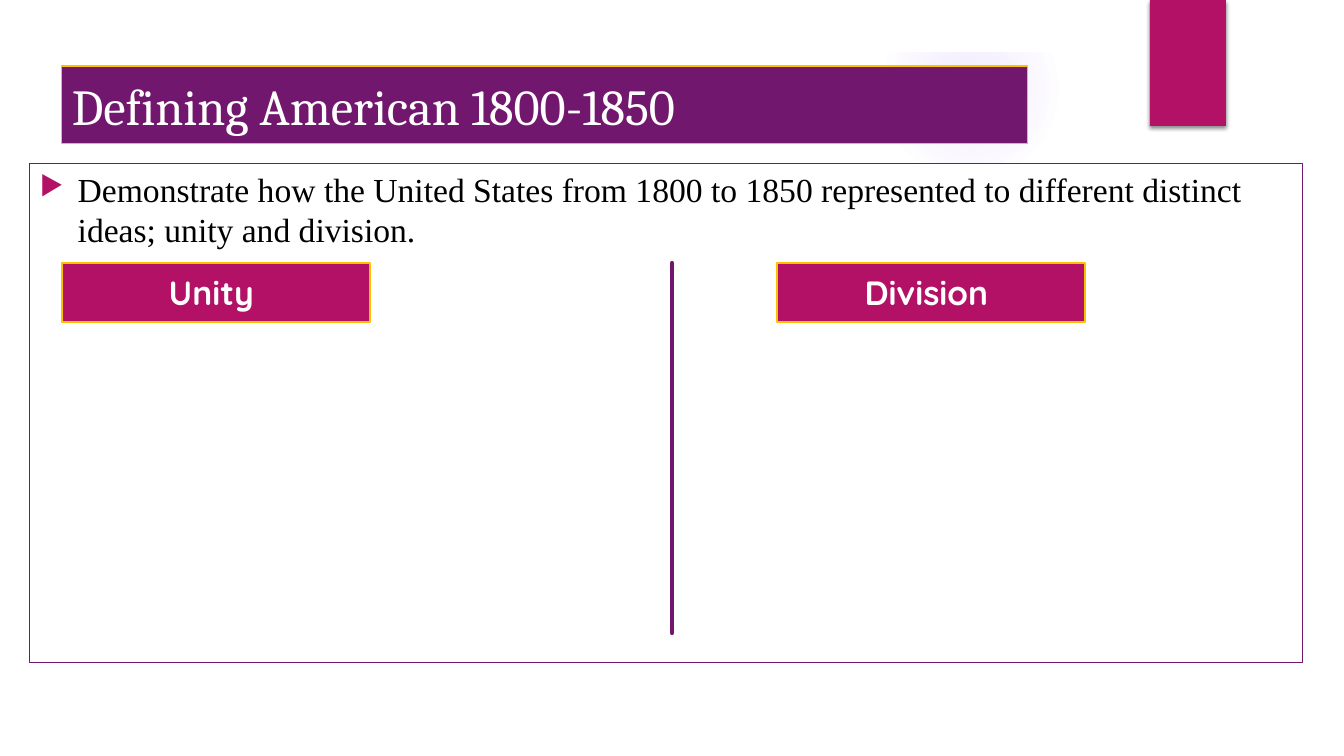
"""Build the "Defining American 1800-1850" slide comparing unity and division."""
import pptx
import pptx.dml.color
import pptx.enum.shapes
import pptx.enum.text
import pptx.oxml
import pptx.oxml.ns
import pptx.util

PX = 914400 / 100.8
THEME = {
    "plum": "71186E", "magenta": "B31166", "gold": "FFC000",
    "white": "FFFFFF", "black": "000000", "violet": "9B6BF2",
    "title_size": 36, "text_size": 24,
}
SHAPE = pptx.enum.shapes.MSO_SHAPE
ALIGN = pptx.enum.text.PP_ALIGN
ANCHOR = pptx.enum.text.MSO_ANCHOR
NAMESPACE = pptx.oxml.ns.nsdecls("a")


def add_block(kind, box, fill, border=None, weight=0):
    block = slide.shapes.add_shape(kind, *(round(length * PX) for length in box))
    block.shadow.inherit = False
    block.fill.solid()
    block.fill.fore_color.rgb = pptx.dml.color.RGBColor.from_string(THEME[fill])
    if border:
        block.line.color.rgb = pptx.dml.color.RGBColor.from_string(THEME[border])
        block.line.width = pptx.util.Pt(weight)
    else:
        block.line.fill.background()
    return block


def write(block, wording, color, anchor, align, font):
    block.text_frame.word_wrap = True
    block.text_frame.vertical_anchor = anchor
    paragraph = block.text_frame.paragraphs[0]
    paragraph.alignment = align
    run = paragraph.add_run()
    run.text = wording
    run.font.color.rgb = pptx.dml.color.RGBColor.from_string(THEME[color])
    for attribute, value in font.items():
        setattr(run.font, attribute, value)
    return paragraph


deck = pptx.Presentation()
deck.slide_width = round(1344 * PX)
deck.slide_height = round(756 * PX)
slide = deck.slides.add_slide(deck.slide_layouts[6])

glow = add_block(SHAPE.OVAL, (882, 1, 176, 176), "violet")
stops = "".join(
    f'<a:gs pos="{position}000"><a:srgbClr val="{THEME["violet"]}">'
    f'<a:alpha val="{opacity}000"/></a:srgbClr></a:gs>'
    for position, opacity in ((0, 14), (36, 7), (73, 0), (100, 0))
)
glow_fill = glow.element.spPr.find(pptx.oxml.ns.qn("a:solidFill"))
glow_fill.getparent().replace(glow_fill, pptx.oxml.parse_xml(
    f'<a:gradFill {NAMESPACE}><a:gsLst>{stops}</a:gsLst><a:path path="circle">'
    '<a:fillToRect l="50000" t="50000" r="50000" b="50000"/></a:path></a:gradFill>'
))
add_block(SHAPE.RECTANGLE, (0, 0, 1344, 52), "white")

ribbon = add_block(SHAPE.RECTANGLE, (1150, 0, 76, 126), "magenta")
ribbon.element.spPr.find(pptx.oxml.ns.qn("a:effectLst")).append(pptx.oxml.parse_xml(
    f'<a:outerShdw {NAMESPACE} blurRad="38100" dist="25400" dir="5400000" rotWithShape="0">'
    f'<a:srgbClr val="{THEME["black"]}"><a:alpha val="45000"/></a:srgbClr></a:outerShdw>'
))

title = add_block(SHAPE.RECTANGLE, (62, 66, 966, 78), "plum", "gold", 0.75)
write(title, "Defining American 1800-1850", "white", ANCHOR.MIDDLE, ALIGN.LEFT,
      {"name": "Cambria", "size": pptx.util.Pt(THEME["title_size"])})

prompt = add_block(SHAPE.RECTANGLE, (30, 164, 1273, 499), "white", "plum", 0.75)
task = write(
    prompt,
    "Demonstrate how the United States from 1800 to 1850 represented to different "
    "distinct ideas; unity and division.",
    "black", ANCHOR.TOP, ALIGN.LEFT,
    {"name": "Times New Roman", "size": pptx.util.Pt(THEME["text_size"])},
)
task_format = task._p.get_or_add_pPr()
task_format.set("marL", "342900")
task_format.set("indent", "-342900")
for bullet_part in (
    f'<a:buClr {NAMESPACE}><a:srgbClr val="{THEME["magenta"]}"/></a:buClr>',
    f'<a:buSzPct {NAMESPACE} val="80000"/>',
    f'<a:buChar {NAMESPACE} char="▶"/>',
):
    task_format.append(pptx.oxml.parse_xml(bullet_part))

divider = slide.shapes.add_connector(
    pptx.enum.shapes.MSO_CONNECTOR.STRAIGHT,
    *(round(length * PX) for length in (672, 263, 672, 633)))
divider.line.color.rgb = pptx.dml.color.RGBColor.from_string(THEME["plum"])
divider.line.width = pptx.util.Pt(3)
divider.line._get_or_add_ln().set("cap", "rnd")
divider.element.spPr.append(pptx.oxml.parse_xml(f"<a:effectLst {NAMESPACE}/>"))

for heading, left in (("Unity ", 62), ("Division ", 777)):
    idea = add_block(SHAPE.RECTANGLE, (left, 263, 308, 59), "magenta", "gold", 1.5)
    write(idea, heading, "white", ANCHOR.MIDDLE, ALIGN.CENTER,
          {"name": "Quicksand", "size": pptx.util.Pt(THEME["text_size"]), "bold": True})

deck.save("out.pptx")
